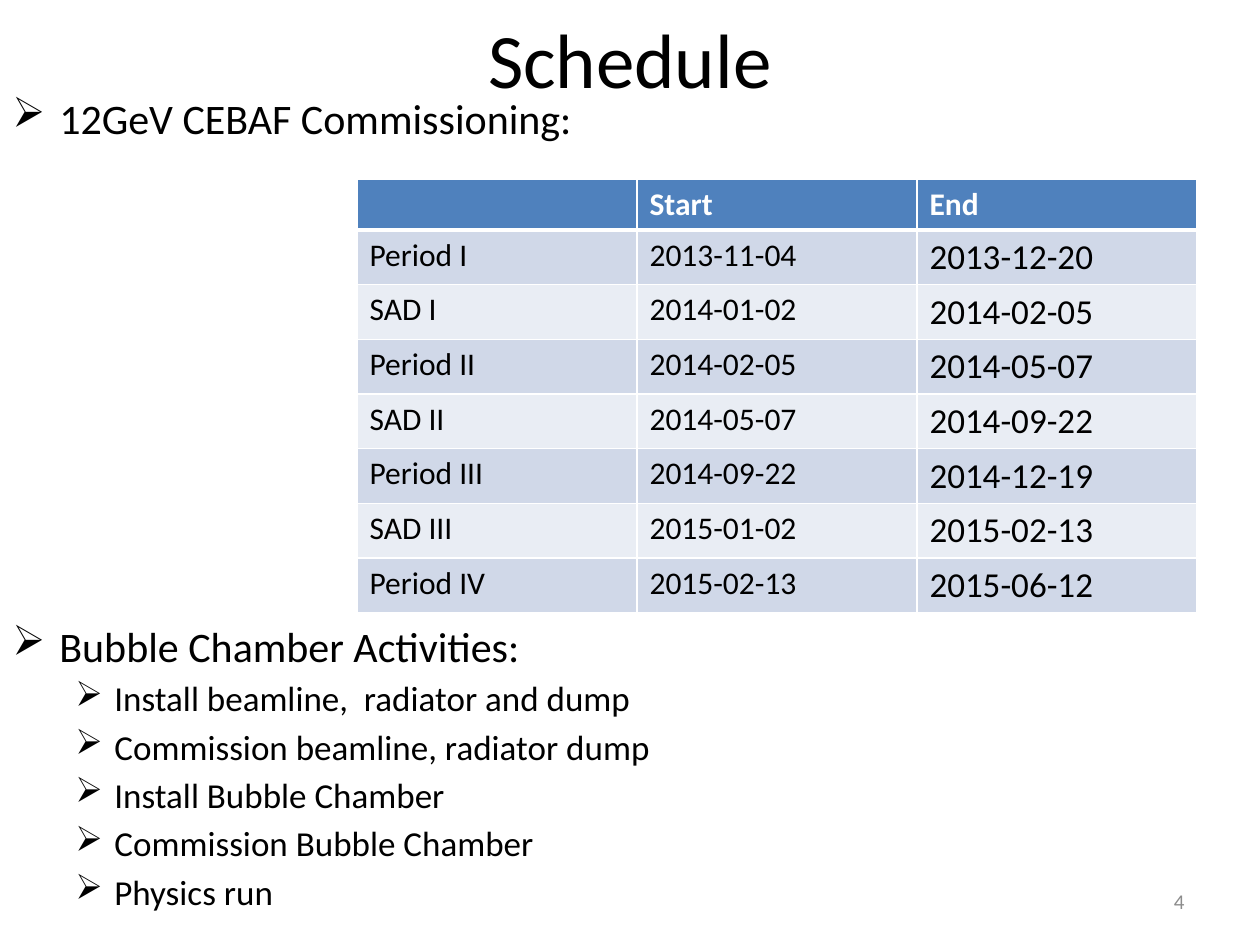
from lxml.etree import SubElement
from pptx import Presentation
from pptx.dml.color import RGBColor
from pptx.enum.text import MSO_ANCHOR, PP_ALIGN
from pptx.oxml.ns import qn
from pptx.util import Pt

PX = 914400 / 126
BLACK = RGBColor(0x00, 0x00, 0x00)
WHITE = RGBColor(0xFF, 0xFF, 0xFF)
GRAY = RGBColor(0x8C, 0x8C, 0x8C)
HEADER_BLUE = RGBColor(0x4F, 0x81, 0xBD)
BAND_DARK = RGBColor(0xD0, 0xD8, 0xE8)
BAND_LIGHT = RGBColor(0xE9, 0xED, 0xF4)


def px(*lengths):
    """Turn pixel lengths into EMU."""
    return [round(length * PX) for length in lengths]


def add_text(paragraph, text, size, color=BLACK, bold=False):
    run = paragraph.add_run()
    run.text = text
    run.font.name = "Calibri"
    run.font.size = Pt(size)
    run.font.color.rgb = color
    run.font.bold = bold


presentation = Presentation()
presentation.slide_width, presentation.slide_height = px(1260, 945)
slide = presentation.slides.add_slide(presentation.slide_layouts[6])

# Bulleted lists above and below the table: (level, text)
bullet_lists = [
    (86, 60, [(0, "12GeV CEBAF Commissioning:")]),
    (614, 331, [
        (0, "Bubble Chamber Activities:"),
        (1, "Install beamline,  radiator and dump"),
        (1, "Commission beamline, radiator dump"),
        (1, "Install Bubble Chamber"),
        (1, "Commission Bubble Chamber"),
        (1, "Physics run"),
    ]),
]
# Per level: text size, left margin, hanging indent
LEVELS = [(24, 47, 47), (20, 102, 39)]
for top, height, items in bullet_lists:
    frame = slide.shapes.add_textbox(*px(0, top, 1260, height)).text_frame
    frame.word_wrap = True
    for index, (level, text) in enumerate(items):
        paragraph = frame.add_paragraph() if index else frame.paragraphs[0]
        size, margin, hanging = LEVELS[level]
        paragraph.level = level
        if index:
            paragraph.space_before = Pt(3.6)
        properties = paragraph._p.get_or_add_pPr()
        properties.set("marL", str(px(margin)[0]))
        properties.set("indent", str(px(-hanging)[0]))
        SubElement(properties, qn("a:buChar")).set("char", "➢")
        add_text(paragraph, text, size)

# Title and slide number
for box, text, size, color, alignment in [
    ((63, 0, 1134, 116), "Schedule", 44, BLACK, PP_ALIGN.CENTER),
    ((903, 876, 294, 50), "4", 12, GRAY, PP_ALIGN.RIGHT),
]:
    frame = slide.shapes.add_textbox(*px(*box)).text_frame
    frame.word_wrap = True
    frame.vertical_anchor = MSO_ANCHOR.MIDDLE
    frame.paragraphs[0].alignment = alignment
    add_text(frame.paragraphs[0], text, size, color)

# Commissioning schedule
schedule = [
    ("", "Start", "End"),
    ("Period I", "2013-11-04", "2013-12-20"),
    ("SAD I", "2014-01-02", "2014-02-05"),
    ("Period II", "2014-02-05", "2014-05-07"),
    ("SAD II", "2014-05-07", "2014-09-22"),
    ("Period III", "2014-09-22", "2014-12-19"),
    ("SAD III", "2015-01-02", "2015-02-13"),
    ("Period IV", "2015-02-13", "2015-06-12"),
]
table = slide.shapes.add_table(len(schedule), 3, *px(357, 179, 840, 408)).table
for row_index, values in enumerate(schedule):
    header = row_index == 0
    table.rows[row_index].height = px(51)[0]
    for column_index, value in enumerate(values):
        cell = table.cell(row_index, column_index)
        properties = cell._tc.get_or_add_tcPr()
        for side in ("lnL", "lnR", "lnT", "lnB"):
            thick = (row_index, side) in [(0, "lnB"), (1, "lnT")]
            line = SubElement(properties, qn(f"a:{side}"))
            line.set("w", str(Pt(3 if thick else 1)))
            fill = SubElement(line, qn("a:solidFill"))
            SubElement(fill, qn("a:srgbClr")).set("val", str(WHITE))
        cell.fill.solid()
        band = BAND_DARK if row_index % 2 else BAND_LIGHT
        cell.fill.fore_color.rgb = HEADER_BLUE if header else band
        if value:
            size = 20 if column_index == 2 and not header else 18
            add_text(cell.text_frame.paragraphs[0], value, size,
                     WHITE if header else BLACK, header)

presentation.save("out.pptx")
